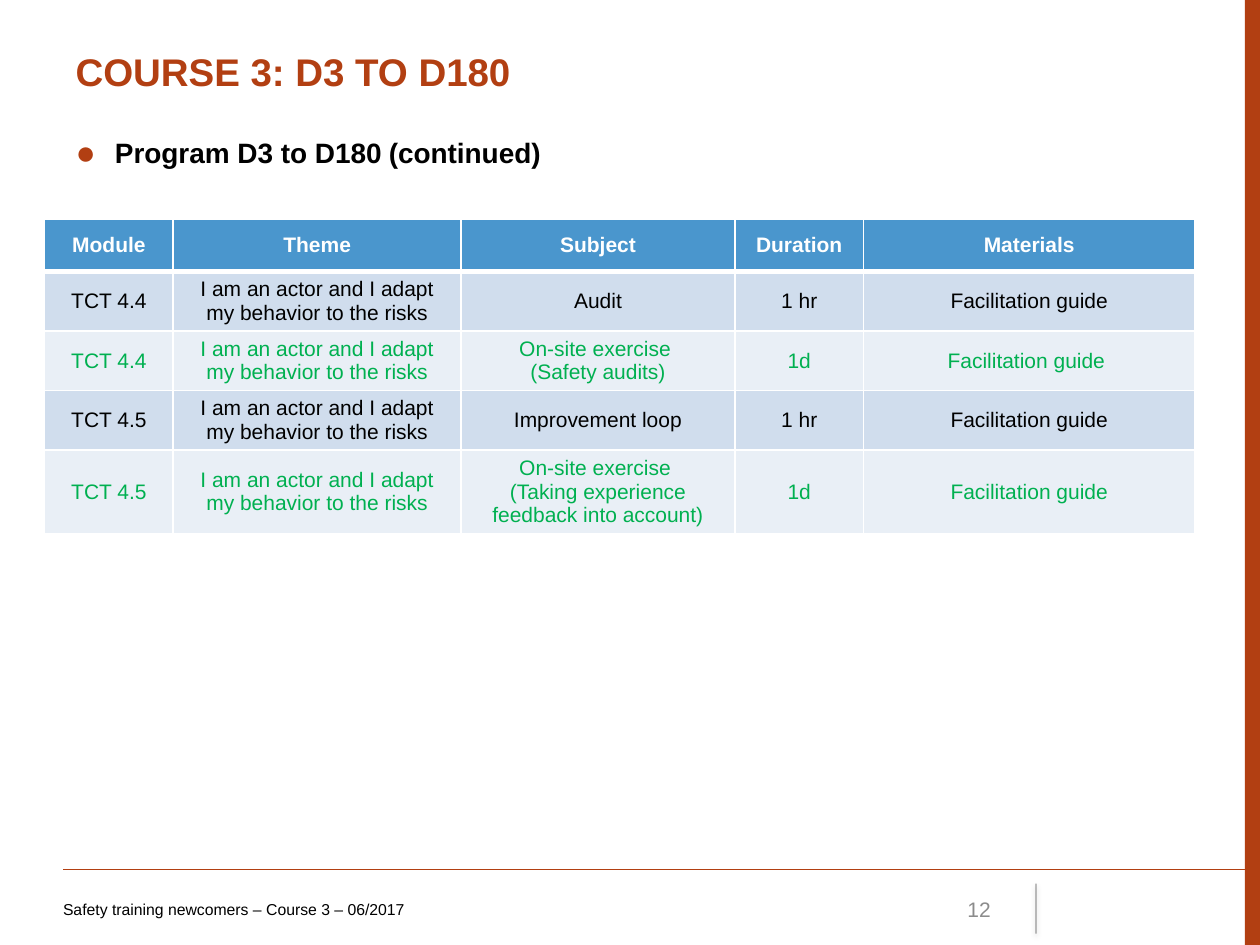
from lxml.etree import SubElement
from pptx import Presentation
from pptx.dml.color import RGBColor
from pptx.enum.shapes import MSO_CONNECTOR as Connector, MSO_SHAPE as Shape
from pptx.enum.text import MSO_ANCHOR as Anchor, MSO_AUTO_SIZE as AutoSize, PP_ALIGN as Align
from pptx.oxml.ns import qn
from pptx.util import Pt

COLORS = {
    "accent": "B23F12", "black": "000000", "white": "FFFFFF", "page": "8C8C8C",
    "header": "4A96CD", "dark_band": "D0DDED", "light_band": "E9EFF6", "exercise": "00B050",
}
THEME = "I am an actor and I adapt my behavior to the risks"
GUIDE = "Facilitation guide"
HEADINGS = ["Module", "Theme", "Subject", "Duration", "Materials"]
SESSIONS = [
    ["TCT 4.4", THEME, "Audit", "1 hr", GUIDE],
    ["TCT 4.4", THEME, "On-site exercise \n(Safety audits)", "1d", GUIDE + " "],
    ["TCT 4.5", THEME, "Improvement loop", "1 hr", GUIDE],
    ["TCT 4.5", THEME, "On-site exercise \n(Taking experience feedback into account)", "1d", GUIDE],
]
COLUMN_WIDTHS = [73.5, 164.5, 156.5, 73.5, 189.5]
ROW_HEIGHT = 29.5


def rgb(name):
    return RGBColor.from_string(COLORS[name])


def add_xml(parent, tag, **attributes):
    return SubElement(parent, qn(tag), {key: str(value) for key, value in attributes.items()})


def add_color(parent, name, alpha=None):
    color = add_xml(parent, "a:srgbClr", val=COLORS[name])
    if alpha is not None:
        add_xml(color, "a:alpha", val=alpha * 1000)


class CourseSlide:
    font = "Arial"

    def __init__(self, slide):
        self.slide = slide

    def add_text(self, paragraph, text, size, color, bold=False):
        run = paragraph.add_run()
        run.text = text
        run.font.name = self.font
        run.font.size = Pt(size)
        run.font.bold = bold
        run.font.color.rgb = rgb(color)

    def place(self, holder, left, top, width, height, margin_top):
        """Position a placeholder and return its first paragraph."""
        holder.left, holder.top, holder.width, holder.height = map(Pt, (left, top, width, height))
        frame = holder.text_frame
        frame.auto_size = AutoSize.NONE
        frame.word_wrap = True
        frame.vertical_anchor = Anchor.TOP
        frame.margin_top = Pt(margin_top)
        paragraph = frame.paragraphs[0]
        paragraph.alignment = Align.LEFT
        paragraph.space_before = Pt(0)
        return paragraph

    def title(self, text):
        paragraph = self.place(self.slide.shapes.title, 36, 21.6, 647.3, 49.7, 5.9)
        self.add_text(paragraph, text, 22, "accent", True)

    def heading(self, runs):
        paragraph = self.place(self.slide.placeholders[1], 36, 72, 647.3, 33.8, 5.5)
        properties = paragraph._p.get_or_add_pPr()
        properties.set("marL", str(Pt(22.5)))
        properties.set("indent", str(Pt(-22.5)))
        add_color(add_xml(properties, "a:buClr"), "accent")
        add_xml(properties, "a:buSzPct", val=120000)
        add_xml(properties, "a:buFont", typeface=self.font)
        add_xml(properties, "a:buChar", char="●")
        for text, size in runs:
            self.add_text(paragraph, text, size, "black", True)

    def bar(self, left, top, width, height):
        bar = self.slide.shapes.add_shape(Shape.RECTANGLE, *map(Pt, (left, top, width, height)))
        bar.shadow.inherit = False
        bar.fill.solid()
        bar.fill.fore_color.rgb = rgb("accent")
        bar.line.fill.background()

    def rule(self, start, end, color, width, alpha=None, shadow=False):
        rule = self.slide.shapes.add_connector(Connector.STRAIGHT, *map(Pt, start + end))
        rule.line.width = Pt(width)
        rule.line.color.rgb = rgb(color)
        if alpha is not None:
            solid = rule.line._ln.find(qn("a:solidFill"))
            add_xml(solid[0], "a:alpha", val=alpha * 1000)
        effects = add_xml(rule._element.spPr, "a:effectLst")
        if shadow:
            outer = add_xml(effects, "a:outerShdw", blurRad=Pt(3.1), dist=Pt(1.6),
                            dir=5400000, rotWithShape=0)
            add_color(outer, "black", 38)

    def label(self, text, left, top, width, height, size, color, align=Align.LEFT, margin_left=7.2):
        frame = self.slide.shapes.add_textbox(*map(Pt, (left, top, width, height))).text_frame
        frame.word_wrap = True
        frame.vertical_anchor = Anchor.MIDDLE
        frame.margin_left = Pt(margin_left)
        frame.paragraphs[0].alignment = align
        self.add_text(frame.paragraphs[0], text, size, color)

    def cell(self, cell, text, fill, color, bold, top_border, bottom_border):
        borders = {"a:lnL": 1, "a:lnR": 1, "a:lnT": top_border, "a:lnB": bottom_border}
        properties = cell._tc.get_or_add_tcPr()
        for tag, width in borders.items():
            border = add_xml(properties, tag, w=Pt(width))
            add_color(add_xml(border, "a:solidFill"), "white")
        cell.fill.solid()
        cell.fill.fore_color.rgb = rgb(fill)
        cell.vertical_anchor = Anchor.MIDDLE
        frame = cell.text_frame
        for index, line in enumerate(text.split("\n")):
            paragraph = frame.add_paragraph() if index else frame.paragraphs[0]
            paragraph.alignment = Align.CENTER
            self.add_text(paragraph, line, 12, color, bold)

    def program(self, left, top):
        rows = [HEADINGS] + SESSIONS
        table = self.slide.shapes.add_table(
            len(rows), len(HEADINGS), Pt(left), Pt(top),
            Pt(sum(COLUMN_WIDTHS)), Pt(ROW_HEIGHT * len(rows))).table
        for column, width in zip(table.columns, COLUMN_WIDTHS):
            column.width = Pt(width)
        for r, texts in enumerate(rows):
            if r == 0:
                fill, color = "header", "white"
            elif r % 2:
                fill, color = "dark_band", "black"
            else:
                fill, color = "light_band", "exercise"
            for c, text in enumerate(texts):
                self.cell(table.cell(r, c), text, fill, color, bold=r == 0,
                          top_border=3 if r == 1 else 1, bottom_border=3 if r == 0 else 1)


def main():
    deck = Presentation()
    deck.slide_width, deck.slide_height = Pt(720), Pt(540)
    course = CourseSlide(deck.slides.add_slide(deck.slide_layouts[1]))
    course.bar(711.3, 0, 8.7, 540)
    course.rule((36, 497), (720, 497), "accent", 0.75)
    course.rule((592, 505), (592, 533.5), "black", 0.5, alpha=70, shadow=True)
    course.title("COURSE 3: D3 TO D180")
    course.heading([("Program D3 to D180", 16), (" ", 14), ("(continued)", 16)])
    course.program(25.5, 125.5)
    course.label("12", 516.2, 505, 57, 28.8, 12, "page", Align.RIGHT)
    course.label("Safety training newcomers – Course 3 – 06/2017",
                 36, 505, 437.8, 28.8, 9, "black", margin_left=0)
    deck.save("out.pptx")


if __name__ == "__main__":
    main()
